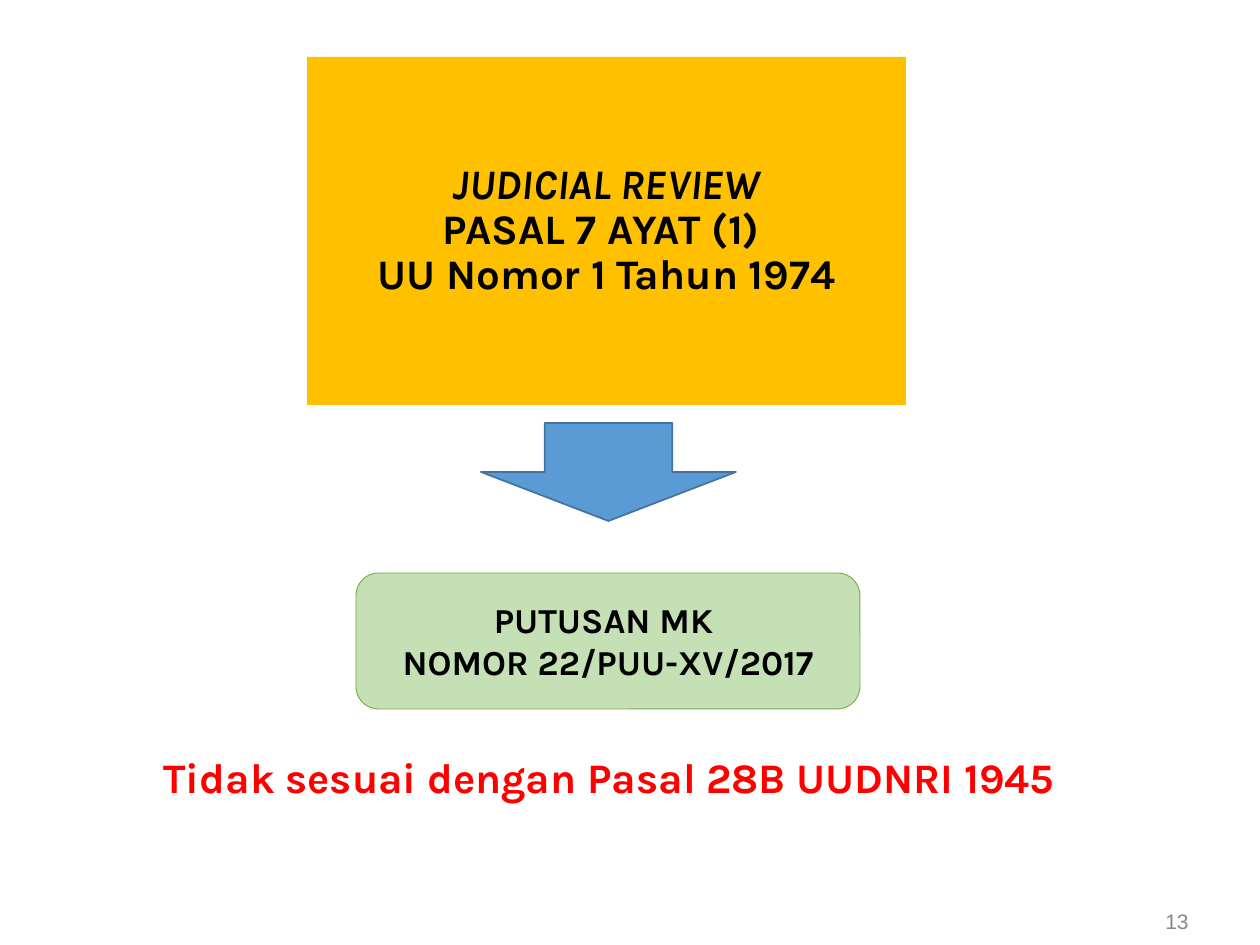
import pptx
import pptx.dml.color
import pptx.enum.shapes
import pptx.enum.text
import pptx.util

SHAPE = pptx.enum.shapes.MSO_SHAPE
ALIGN = pptx.enum.text.PP_ALIGN
ANCHOR = pptx.enum.text.MSO_ANCHOR
PX = 914400 / 126

COLORS = {
    "amber": "FFC000", "blue": "5B9BD5", "dark blue": "43739E",
    "pale green": "C5E0B4", "green": "70AD47",
    "black": "000000", "red": "FF0000", "gray": "898989",
}

# Content: each paragraph is a list of (line, italic)
REVIEW = [[("JUDICIAL REVIEW", True), ("PASAL 7 AYAT (1) ", False),
           ("UU Nomor 1 Tahun 1974", False)]]
RULING = [[("PUTUSAN MK ", False)], [("NOMOR 22/PUU-XV/2017", False)]]
CONCLUSION = [[("Tidak sesuai dengan Pasal 28B UUDNRI 1945", False)]]
PAGE_NUMBER = [[("13", False)]]

# Places: left, top, width, height in px
REVIEW_BOX = (307, 57, 599, 348)
ARROW_BOX = (481, 423, 255, 98)
RULING_BOX = (356, 573, 504, 136)
CONCLUSION_BOX = (110, 745, 998, 63)
NUMBER_BOX = (907, 896, 294, 50)


def emu(pixels):
    return pptx.util.Emu(round(pixels * PX))


def rgb(name):
    return pptx.dml.color.RGBColor.from_string(COLORS[name])


def add_block(slide, kind, box, fill, line=None, line_width=1):
    shape = slide.shapes.add_shape(kind, *map(emu, box))
    shape.shadow.inherit = False
    shape.fill.solid()
    shape.fill.fore_color.rgb = rgb(fill)
    if line:
        shape.line.color.rgb = rgb(line)
        shape.line.width = pptx.util.Pt(line_width)
    else:
        shape.line.fill.background()
    return shape


def write(shape, paragraphs, size, color="black", font="Karla", bold=True,
          align=ALIGN.CENTER, anchor=ANCHOR.MIDDLE, spacing=1.0):
    frame = shape.text_frame
    frame.word_wrap = True
    frame.vertical_anchor = anchor
    for index, lines in enumerate(paragraphs):
        paragraph = frame.add_paragraph() if index else frame.paragraphs[0]
        paragraph.alignment = align
        paragraph.line_spacing = spacing
        for number, (text, italic) in enumerate(lines):
            if number:
                paragraph.add_line_break()
            run = paragraph.add_run()
            run.text = text
            run.font.name = font
            run.font.size = pptx.util.Pt(size)
            run.font.bold = bold
            run.font.italic = italic
            run.font.color.rgb = rgb(color)


def main():
    presentation = pptx.Presentation()
    presentation.slide_width = pptx.util.Inches(10)
    presentation.slide_height = pptx.util.Inches(7.5)
    slide = presentation.slides.add_slide(presentation.slide_layouts[6])

    # Reviewed article
    review = add_block(slide, SHAPE.RECTANGLE, REVIEW_BOX, "amber")
    write(review, REVIEW, 24, spacing=0.9)

    # Arrow down to the ruling
    add_block(slide, SHAPE.DOWN_ARROW, ARROW_BOX, "blue", "dark blue")
    ruling = add_block(slide, SHAPE.ROUNDED_RECTANGLE, RULING_BOX,
                       "pale green", "green", 0.5)
    write(ruling, RULING, 20)

    # Conclusion and page number
    conclusion = slide.shapes.add_textbox(*map(emu, CONCLUSION_BOX))
    write(conclusion, CONCLUSION, 24, "red", anchor=ANCHOR.TOP)
    page_number = slide.shapes.add_textbox(*map(emu, NUMBER_BOX))
    write(page_number, PAGE_NUMBER, 12, "gray", "Arial", False, ALIGN.RIGHT)

    presentation.save("out.pptx")


if __name__ == "__main__":
    main()
